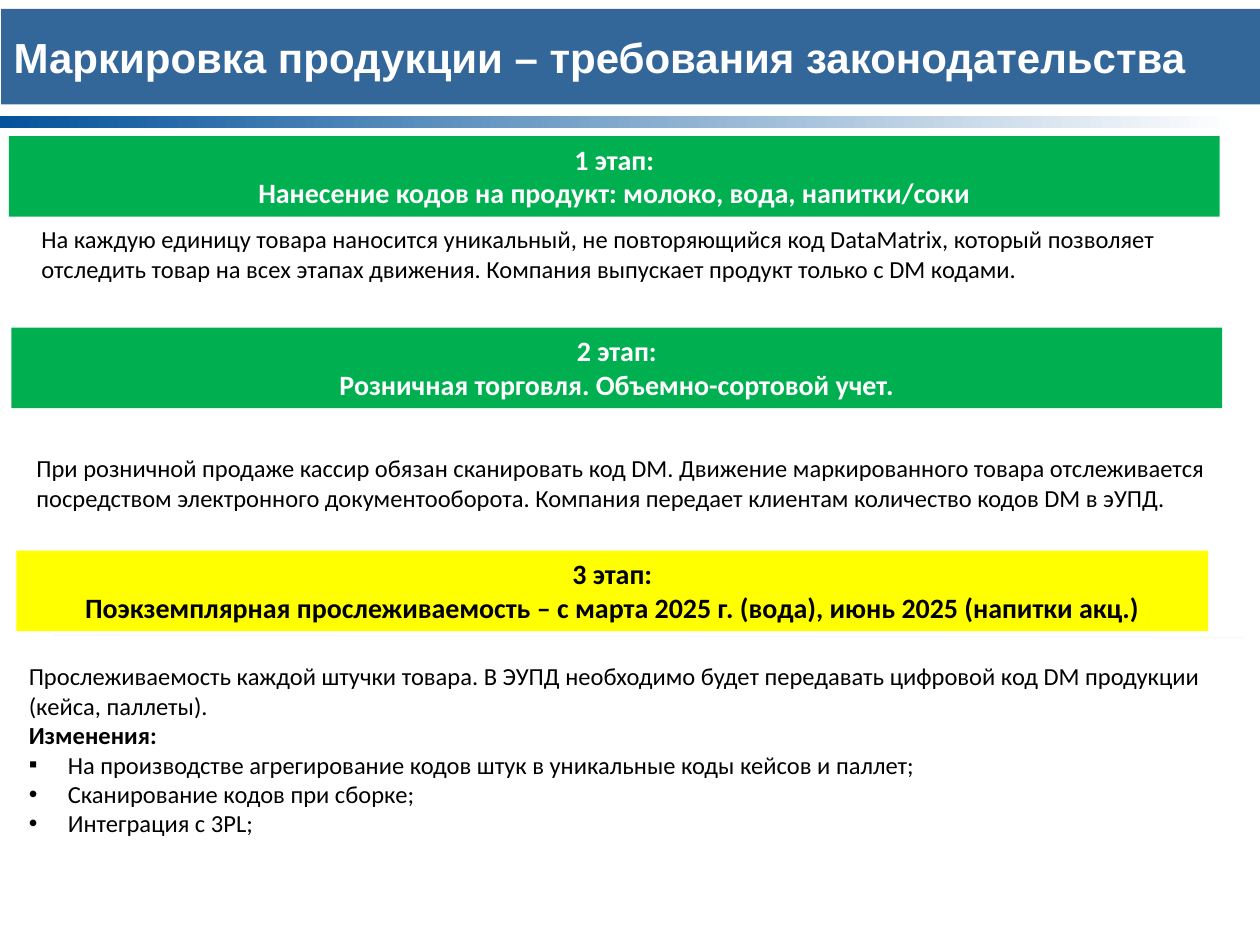
from dataclasses import dataclass

from lxml.etree import SubElement
from pptx import Presentation
from pptx.dml.color import RGBColor
from pptx.enum.shapes import MSO_CONNECTOR, MSO_SHAPE
from pptx.enum.text import MSO_ANCHOR, PP_ALIGN
from pptx.oxml.ns import qn
from pptx.util import Inches, Pt


@dataclass(frozen=True)
class Theme:
    title_fill: RGBColor = RGBColor(0x33, 0x66, 0x99)
    accent: RGBColor = RGBColor(0x04, 0x53, 0x9B)
    done: RGBColor = RGBColor(0x00, 0xB0, 0x50)
    planned: RGBColor = RGBColor(0xFF, 0xFF, 0x00)
    divider: RGBColor = RGBColor(0xF9, 0xF9, 0xF9)
    white: RGBColor = RGBColor(0xFF, 0xFF, 0xFF)
    black: RGBColor = RGBColor(0x00, 0x00, 0x00)
    title_font: str = "Arial"
    body_font: str = "Calibri"
    title_size: int = 24
    stage_size: int = 16
    body_size: int = 14


THEME = Theme()


def add_rectangle(page, box, color=None):
    shape = page.shapes.add_shape(MSO_SHAPE.RECTANGLE, *map(Inches, box))
    shape.shadow.inherit = False
    shape.line.fill.background()
    if color is not None:
        shape.fill.solid()
        shape.fill.fore_color.rgb = color
    return shape


def write(para, text, size=THEME.body_size, font=THEME.body_font,
          color=THEME.black, bold=False, align=PP_ALIGN.LEFT, bullet=None):
    para.alignment = align
    if bullet:
        properties = para._p.get_or_add_pPr()
        properties.set("marL", str(Inches(0.31)))
        properties.set("indent", str(-Inches(0.31)))
        SubElement(properties, qn("a:buFont")).set("typeface", "Arial")
        SubElement(properties, qn("a:buChar")).set("char", bullet)
    span = para.add_run()
    span.text = text
    span.font.size = Pt(size)
    span.font.name = font
    span.font.bold = bold
    span.font.color.rgb = color


def write_lines(frame, lines, **common):
    """Write (text, format) pairs, one paragraph each."""
    frame.word_wrap = True
    for index, (text, line_format) in enumerate(lines):
        para = frame.add_paragraph() if index else frame.paragraphs[0]
        write(para, text, **common, **line_format)


def add_header(page, title_box, stripe_box, title):
    stripe = add_rectangle(page, stripe_box)
    stripe.fill.gradient()
    stripe.fill.gradient_angle = 0
    for stop, color, position in zip(stripe.fill.gradient_stops, (THEME.accent, THEME.white), (0, 1)):
        stop.color.rgb = color
        stop.position = position
    banner = add_rectangle(page, title_box, THEME.title_fill)
    banner.text_frame.vertical_anchor = MSO_ANCHOR.MIDDLE
    write_lines(banner.text_frame, [(title, {})], size=THEME.title_size,
                font=THEME.title_font, color=THEME.white, bold=True)


def add_divider(page, start, end):
    line = page.shapes.add_connector(MSO_CONNECTOR.STRAIGHT, *map(Inches, start + end))
    line.line.color.rgb = THEME.divider
    line.line.width = Pt(0.75)
    SubElement(line._element.spPr, qn("a:effectLst"))


def add_stage(page, banner_box, body_box, heading, lines, fill, color):
    banner = add_rectangle(page, banner_box, fill)
    banner.text_frame.vertical_anchor = MSO_ANCHOR.TOP
    write_lines(banner.text_frame, [(text, {}) for text in heading],
                size=THEME.stage_size, color=color, bold=True, align=PP_ALIGN.CENTER)
    body = page.shapes.add_textbox(*map(Inches, body_box))
    write_lines(body.text_frame, lines)


def main():
    deck = Presentation()
    deck.slide_width, deck.slide_height = Inches(10), Inches(7.5)
    page = deck.slides.add_slide(deck.slide_layouts[6])

    add_header(page, (0.01, 0.07, 9.99, 0.76), (0, 0.92, 9.83, 0.1),
               "Маркировка продукции – требования законодательства")
    add_divider(page, (0.42, 5.04), (9.88, 5.06))
    add_stage(
        page, (0.07, 1.08, 9.61, 0.64), (0.23, 1.73, 9.61, 0.57),
        ["1 этап:", "Нанесение кодов на продукт: молоко, вода, напитки/соки"],
        [("На каждую единицу товара наносится уникальный, не повторяющийся код DataMatrix, "
          "который позволяет отследить товар на всех этапах движения. "
          "Компания выпускает продукт только с DM кодами.", {})],
        THEME.done, THEME.white)
    add_stage(
        page, (0.09, 2.6, 9.61, 0.64), (0.19, 3.55, 9.61, 0.57),
        ["2 этап:", "Розничная торговля. Объемно-сортовой учет."],
        [("При розничной продаже кассир обязан сканировать код DM. "
          "Движение маркированного товара отслеживается посредством электронного "
          "документооборота. Компания передает клиентам количество кодов DM в эУПД.", {})],
        THEME.done, THEME.white)
    add_stage(
        page, (0.13, 4.37, 9.46, 0.64), (0.13, 5.2, 9.61, 1.51),
        ["3 этап:",
         "Поэкземплярная прослеживаемость – с марта 2025 г. (вода), июнь 2025 (напитки акц.)"],
        [("Прослеживаемость каждой штучки товара. В ЭУПД необходимо будет передавать "
          "цифровой код DM продукции (кейса, паллеты).", {}),
         ("Изменения:", {"bold": True}),
         ("На производстве агрегирование кодов штук в уникальные коды кейсов и паллет;",
          {"bullet": "▪"}),
         ("Сканирование кодов при сборке;", {"bullet": "•"}),
         ("Интеграция с 3PL;", {"bullet": "•"})],
        THEME.planned, THEME.black)

    deck.save("out.pptx")


if __name__ == "__main__":
    main()
